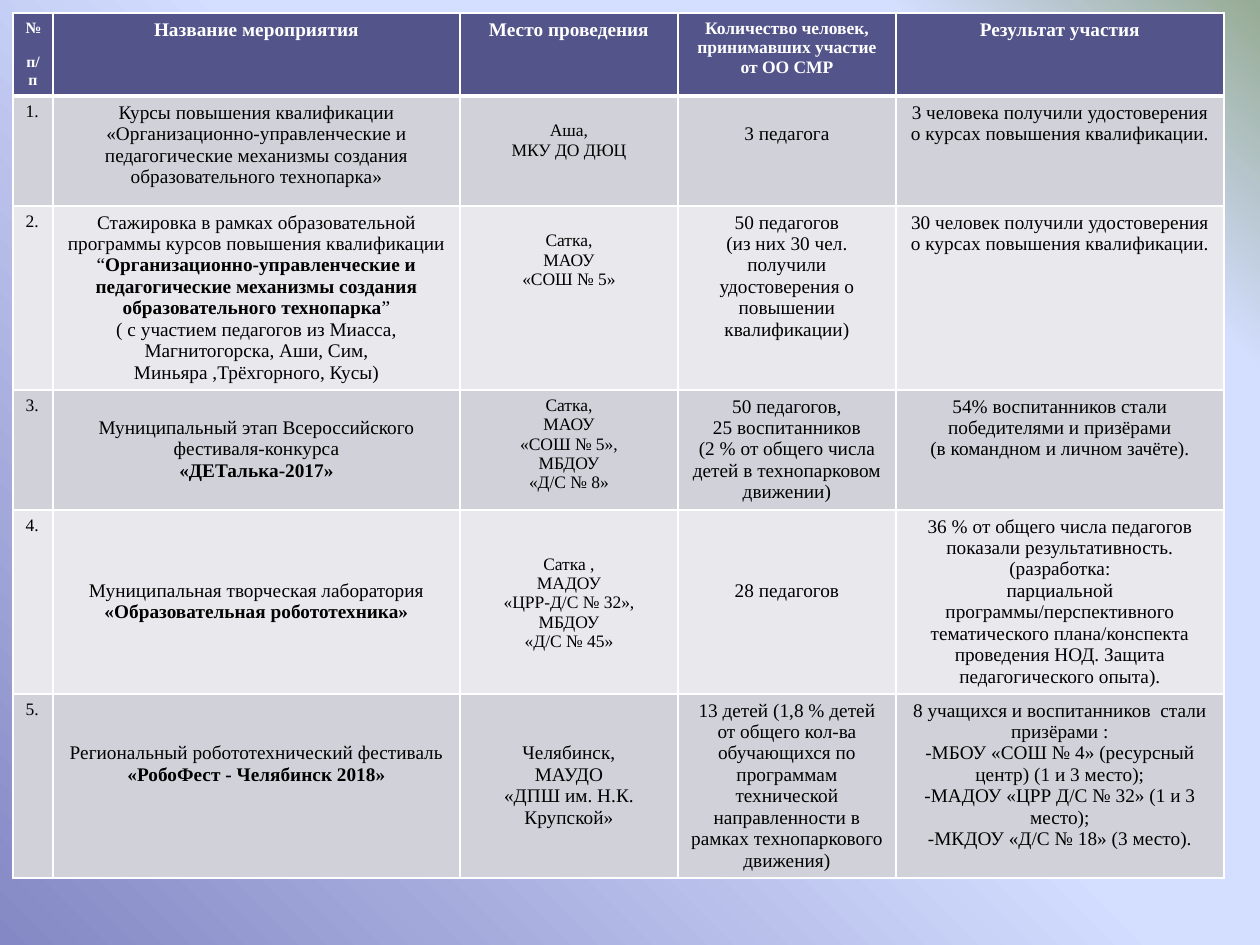
from dataclasses import dataclass

from pptx import Presentation
from pptx.dml.color import RGBColor
from pptx.enum.text import PP_ALIGN
from pptx.oxml import parse_xml
from pptx.oxml.ns import nsdecls
from pptx.table import _Cell
from pptx.util import Pt

EMU_PER_PX = 914400 / 126
FONT = "Times New Roman"
COLORS = {
    "header": "53548A", "odd_row": "D1D1DA", "even_row": "E9E9ED",
    "border": "FFFFFF", "header_text": "FFFFFF", "text": "000000",
    "violet": "8488C4", "sky": "D4DEFF", "green": "96AB94",
}
BACKGROUND_STOPS = [(0, "violet"), (53, "sky"), (83, "sky"), (100, "green")]
COLUMN_WIDTHS = [40, 407, 218, 218, 328]
ROW_HEIGHTS = [83, 110, 184, 120, 184, 184]
CELL_MARGIN = 6
LINE_PX_PER_PT = 1.94


@dataclass
class Entry:
    """Cell content; asterisks enclose bold text, offset_lines lowers the first line."""
    text: str
    size: int = 11
    offset_lines: int = 0


HEADINGS = [
    Entry("№ п/п", 9),
    Entry("Название мероприятия"),
    Entry("Место проведения"),
    Entry("Количество человек, принимавших участие от ОО СМР", 10),
    Entry("Результат участия"),
]
EVENTS = [
    [
        Entry("Курсы повышения квалификации «Организационно-управленческие и "
              "педагогические механизмы создания образовательного технопарка»"),
        Entry("Аша,\nМКУ ДО ДЮЦ", 10, 1),
        Entry("3 педагога", offset_lines=1),
        Entry("3 человека получили удостоверения о курсах повышения квалификации."),
    ],
    [
        Entry("Стажировка в рамках образовательной программы курсов повышения "
              "квалификации “*Организационно-управленческие и педагогические "
              "механизмы создания образовательного технопарка*”\n"
              "( с участием педагогов из Миасса, Магнитогорска, Аши, Сим, "
              "Миньяра ,Трёхгорного, Кусы)"),
        Entry("Сатка,\nМАОУ\n«СОШ № 5»", 10, 1),
        Entry("50 педагогов\n(из них 30 чел. получили удостоверения о повышении "
              "квалификации)"),
        Entry("30 человек получили удостоверения о курсах повышения квалификации."),
    ],
    [
        Entry("Муниципальный этап Всероссийского фестиваля-конкурса\n"
              "*«ДЕТалька-2017»*", offset_lines=1),
        Entry("Сатка,\nМАОУ\n«СОШ № 5»,\nМБДОУ\n«Д/С № 8»", 10),
        Entry("50 педагогов,\n25 воспитанников\n(2 % от общего числа детей в "
              "технопарковом движении)"),
        Entry("54% воспитанников стали победителями и призёрами\n"
              "(в командном и личном зачёте)."),
    ],
    [
        Entry("Муниципальная творческая лаборатория "
              "*«Образовательная робототехника»*", offset_lines=3),
        Entry("Сатка ,\nМАДОУ\n«ЦРР-Д/С № 32», МБДОУ\n«Д/С № 45»", 10, 2),
        Entry("28 педагогов", offset_lines=3),
        Entry("36 % от общего числа педагогов показали результативность.\n"
              "(разработка:\nпарциальной программы/перспективного тематического "
              "плана/конспекта проведения НОД. Защита педагогического опыта)."),
    ],
    [
        Entry("Региональный робототехнический фестиваль "
              "*«РобоФест - Челябинск 2018»*", offset_lines=2),
        Entry("Челябинск,\nМАУДО\n«ДПШ им. Н.К. Крупской»", offset_lines=2),
        Entry("13 детей (1,8 % детей от общего кол-ва обучающихся по программам "
              "технической направленности в рамках технопаркового движения)"),
        Entry("8 учащихся и воспитанников  стали призёрами :\n"
              "-МБОУ «СОШ № 4» (ресурсный центр) (1 и 3 место);\n"
              "-МАДОУ «ЦРР Д/С № 32» (1 и 3 место);\n"
              "-МКДОУ «Д/С № 18» (3 место)."),
    ],
]


def px(length: float) -> int:
    return round(length * EMU_PER_PX)


def set_background(slide) -> None:
    """Radial gradient spreading from the bottom left corner."""
    stops = "".join(
        f'<a:gs pos="{position * 1000}"><a:srgbClr val="{COLORS[color]}"/></a:gs>'
        for position, color in BACKGROUND_STOPS)
    slide.element.cSld.insert(0, parse_xml(
        f'<p:bg {nsdecls("p", "a")}><p:bgPr><a:gradFill rotWithShape="1">'
        f'<a:gsLst>{stops}</a:gsLst><a:path path="circle">'
        '<a:fillToRect t="100000" r="100000"/></a:path></a:gradFill>'
        '<a:effectLst/></p:bgPr></p:bg>'))


def set_borders(cell: _Cell, top: int, bottom: int) -> None:
    properties = cell._tc.get_or_add_tcPr()
    for side, width in (("L", 1), ("R", 1), ("T", top), ("B", bottom)):
        properties.append(parse_xml(
            f'<a:ln{side} {nsdecls("a")} w="{Pt(width)}"><a:solidFill>'
            f'<a:srgbClr val="{COLORS["border"]}"/></a:solidFill></a:ln{side}>'))


def write_entry(cell: _Cell, entry: Entry, color: str, bold: bool,
                alignment: PP_ALIGN) -> None:
    cell.margin_top = px(CELL_MARGIN + entry.offset_lines * entry.size * LINE_PX_PER_PT)
    cell.margin_bottom = px(CELL_MARGIN)
    cell.text_frame.text = entry.text.replace("*", "")
    for paragraph, line in zip(cell.text_frame.paragraphs, entry.text.split("\n")):
        paragraph.alignment = alignment
        paragraph.text = ""
        for index, part in enumerate(line.split("*")):
            if not part:
                continue
            run = paragraph.add_run()
            run.text = part
            run.font.name = FONT
            run.font.size = Pt(entry.size)
            run.font.bold = bold or index % 2 == 1
            run.font.color.rgb = RGBColor.from_string(COLORS[color])


def add_events_table(slide) -> None:
    rows = [HEADINGS] + [[Entry(f"{number}.", 10), *event]
                         for number, event in enumerate(EVENTS, 1)]
    table = slide.shapes.add_table(
        len(rows), len(COLUMN_WIDTHS), px(13), px(13),
        px(sum(COLUMN_WIDTHS)), px(sum(ROW_HEIGHTS))).table
    for column, width in zip(table.columns, COLUMN_WIDTHS):
        column.width = px(width)
    for row_index, (row, height) in enumerate(zip(rows, ROW_HEIGHTS)):
        table.rows[row_index].height = px(height)
        is_header = row_index == 0
        fill = "header" if is_header else ("even_row", "odd_row")[row_index % 2]
        for column_index, entry in enumerate(row):
            cell = table.cell(row_index, column_index)
            set_borders(cell, top=3 if row_index == 1 else 1,
                        bottom=3 if is_header else 1)
            cell.fill.solid()
            cell.fill.fore_color.rgb = RGBColor.from_string(COLORS[fill])
            centred = is_header or column_index > 0
            write_entry(cell, entry, "header_text" if is_header else "text", is_header,
                        PP_ALIGN.CENTER if centred else PP_ALIGN.LEFT)


def main() -> None:
    presentation = Presentation()
    presentation.slide_width = px(1260)
    presentation.slide_height = px(945)
    slide = presentation.slides.add_slide(presentation.slide_layouts[6])
    set_background(slide)
    add_events_table(slide)
    presentation.save("out.pptx")


if __name__ == "__main__":
    main()
